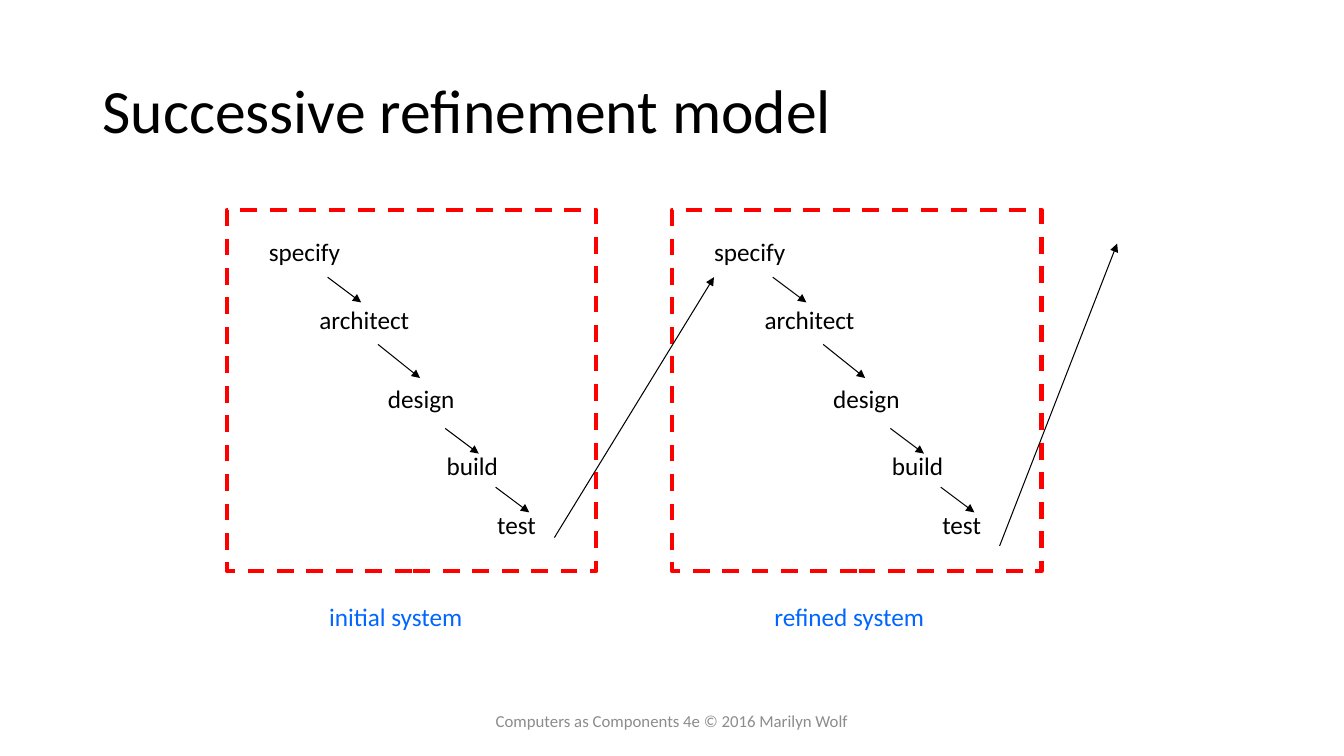
from dataclasses import dataclass

from lxml.etree import SubElement
from pptx import Presentation
from pptx.dml.color import RGBColor
from pptx.enum.dml import MSO_LINE
from pptx.enum.shapes import MSO_CONNECTOR, MSO_SHAPE
from pptx.enum.text import MSO_ANCHOR, MSO_AUTO_SIZE, PP_ALIGN
from pptx.oxml.ns import qn
from pptx.slide import Slide
from pptx.text.text import TextFrame
from pptx.util import Pt


@dataclass(frozen=True)
class Theme:
    font: str = "Calibri"
    ink: RGBColor = RGBColor(0x00, 0x00, 0x00)
    frame: RGBColor = RGBColor(0xFF, 0x00, 0x00)
    caption: RGBColor = RGBColor(0x00, 0x66, 0xFF)
    footer: RGBColor = RGBColor(0x8C, 0x8C, 0x8C)
    title_size: float = 44
    body_size: float = 18
    footer_size: float = 12


@dataclass(frozen=True)
class Label:
    text: str
    left: float
    top: float
    width: float


@dataclass(frozen=True)
class Arrow:
    start: tuple[float, float]
    end: tuple[float, float]


@dataclass(frozen=True)
class System:
    offset: float
    caption: Label


THEME = Theme()
LABEL_HEIGHT = 29

# Phases and arrows of the first system; the second is shifted right
PHASES = [
    Label("specify", 185, 165.5, 66),
    Label("architect", 221, 213.5, 79),
    Label("design", 270, 270, 63),
    Label("build", 312, 318, 52),
    Label("test", 348, 360, 42.5),
]
PHASE_ARROWS = [
    Arrow((234, 198), (258, 216)),
    Arrow((270, 246), (300, 270)),
    Arrow((318, 306), (342, 324)),
    Arrow((354, 348), (378, 366)),
]
SYSTEMS = [
    System(0, Label("initial system", 228, 426, 111)),
    System(318, Label("refined system", 228, 426, 123)),
]
REFINEMENT_ARROWS = [
    Arrow((396, 384), (510, 198)),
    Arrow((714, 390), (798, 174)),
]


def write_text(
    frame: TextFrame,
    text: str,
    *,
    size: float = THEME.body_size,
    color: RGBColor = THEME.ink,
    align: PP_ALIGN = PP_ALIGN.LEFT,
    anchor: MSO_ANCHOR = MSO_ANCHOR.TOP,
    wrap: bool = False,
    line_spacing: float = 1.0,
) -> None:
    frame.word_wrap = wrap
    frame.auto_size = MSO_AUTO_SIZE.NONE if wrap else MSO_AUTO_SIZE.SHAPE_TO_FIT_TEXT
    frame.vertical_anchor = anchor
    paragraph = frame.paragraphs[0]
    paragraph.alignment = align
    paragraph.line_spacing = line_spacing
    run = paragraph.add_run()
    run.text = text
    run.font.name = THEME.font
    run.font.size = Pt(size)
    run.font.color.rgb = color


def add_label(slide: Slide, label: Label, offset: float = 0, **text_format) -> None:
    box = slide.shapes.add_textbox(
        Pt(label.left + offset), Pt(label.top), Pt(label.width), Pt(LABEL_HEIGHT)
    )
    write_text(box.text_frame, label.text, **text_format)


def add_arrow(slide: Slide, arrow: Arrow, offset: float = 0) -> None:
    (start_x, start_y), (end_x, end_y) = arrow.start, arrow.end
    connector = slide.shapes.add_connector(
        MSO_CONNECTOR.STRAIGHT,
        Pt(start_x + offset), Pt(start_y), Pt(end_x + offset), Pt(end_y),
    )
    connector.line.color.rgb = THEME.ink
    connector.line.width = Pt(0.75)
    line = connector.line._get_or_add_ln()
    SubElement(line, qn("a:tailEnd"), type="triangle")
    SubElement(connector._element.spPr, qn("a:effectLst"))


def add_system(slide: Slide, system: System) -> None:
    for phase in PHASES:
        add_label(slide, phase, system.offset)
    for arrow in PHASE_ARROWS:
        add_arrow(slide, arrow, system.offset)

    # Dashed frame around the phases
    frame = slide.shapes.add_shape(
        MSO_SHAPE.RECTANGLE, Pt(162 + system.offset), Pt(150), Pt(264), Pt(258)
    )
    frame.shadow.inherit = False
    frame.fill.background()
    frame.line.color.rgb = THEME.frame
    frame.line.width = Pt(3)
    frame.line.dash_style = MSO_LINE.DASH

    add_label(slide, system.caption, system.offset, color=THEME.caption)


def main() -> None:
    presentation = Presentation()
    presentation.slide_width, presentation.slide_height = Pt(960), Pt(540)
    slide = presentation.slides.add_slide(presentation.slide_layouts[5])

    # Title
    title = slide.shapes.title
    title.left, title.top, title.width, title.height = Pt(66), Pt(28.75), Pt(828), Pt(104.4)
    write_text(
        title.text_frame, "Successive refinement model", size=THEME.title_size,
        anchor=MSO_ANCHOR.MIDDLE, wrap=True, line_spacing=0.9,
    )

    # Systems and the steps between them
    for system in SYSTEMS:
        add_system(slide, system)
    for arrow in REFINEMENT_ARROWS:
        add_arrow(slide, arrow)

    # Footer
    add_label(
        slide, Label("Computers as Components 4e © 2016 Marilyn Wolf", 318, 500.5, 324),
        size=THEME.footer_size, color=THEME.footer, align=PP_ALIGN.CENTER,
        anchor=MSO_ANCHOR.MIDDLE, wrap=True,
    )
    presentation.save("out.pptx")


if __name__ == "__main__":
    main()
